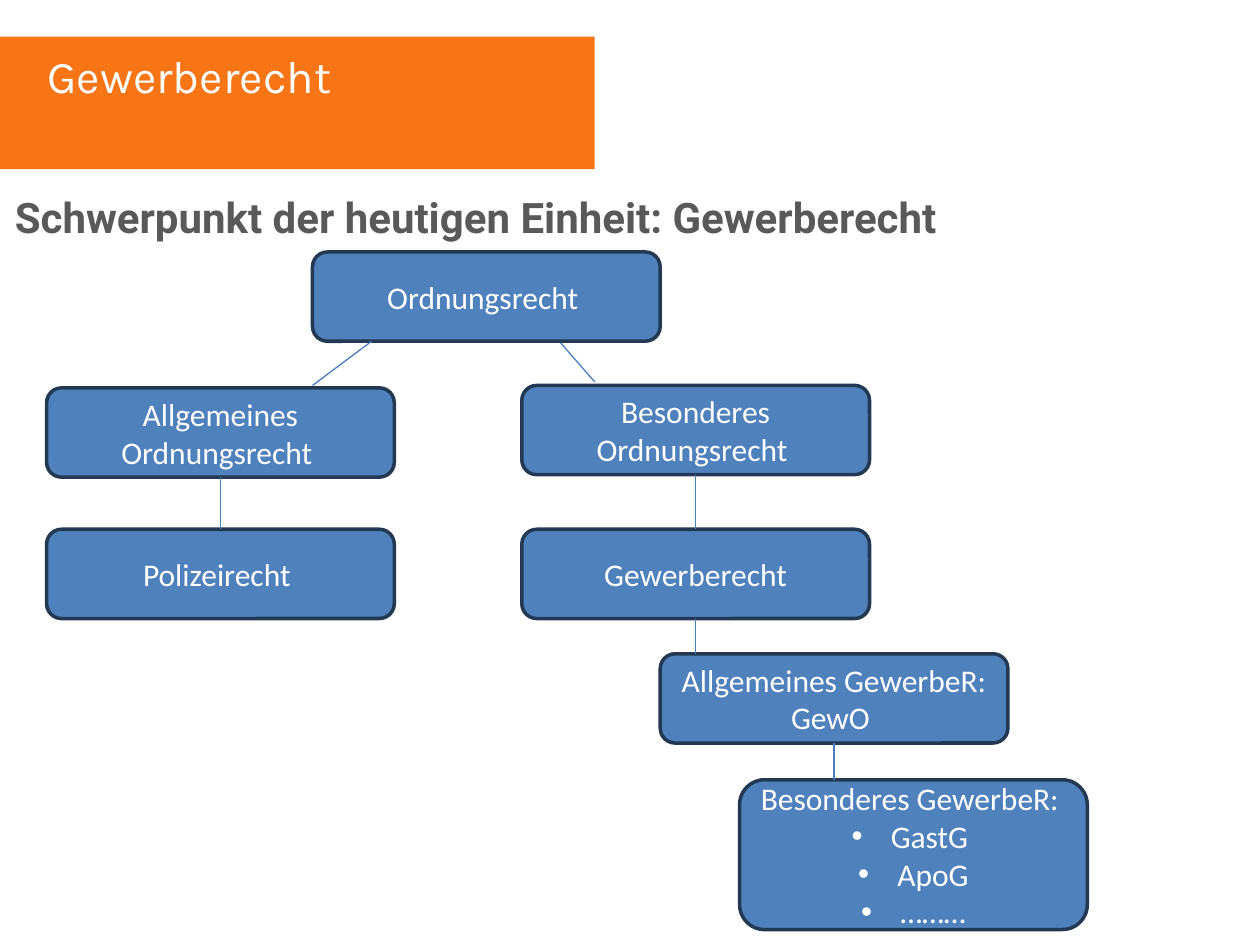
from lxml import etree
from pptx import Presentation
from pptx.dml.color import RGBColor
from pptx.enum import shapes, text
from pptx.oxml import ns
from pptx.util import Cm, Pt

TITLE = "Gewerberecht"
HEADING = "Schwerpunkt der heutigen Einheit: Gewerberecht"
HEADING_TABS = [1, 2, 3, 4, 5.46, 6.73, 8.23, 9.96]
LEFT, RIGHT, LOWER_ROW = 0.94, 10.52, 10.67
BOX_WIDTH, BOX_HEIGHT = 7.01, 1.8
BOXES = {
    "ordnung": (6.3, 5.08, BOX_HEIGHT, "Ordnungsrecht ", []),
    "besonderes_gewerbe": (14.91, 15.72, 3.02, "Besonderes GewerbeR: ",
                           ["GastG ", "ApoG", "………"]),
    "polizei": (LEFT, LOWER_ROW, BOX_HEIGHT, "Polizeirecht ", []),
    "allgemeines": (LEFT, 7.82, BOX_HEIGHT, "Allgemeines Ordnungsrecht ", []),
    "besonderes": (RIGHT, 7.77, BOX_HEIGHT, "Besonderes Ordnungsrecht ", []),
    "gewerbe": (RIGHT, LOWER_ROW, BOX_HEIGHT, "Gewerberecht", []),
    "gewo": (13.31, 13.18, BOX_HEIGHT, "Allgemeines GewerbeR: GewO ", []),
}
BRANCHES = [(7.49, 6.88, 6.3, 7.77), (11.3, 6.91, 11.99, 7.7)]
DESCENTS = [
    ("allgemeines", "polizei", True),
    ("besonderes", "gewerbe", True),
    ("gewerbe", "gewo", False),
    ("gewo", "besonderes_gewerbe", False),
]


def color(target, value):
    target.rgb = RGBColor.from_string(value)


def fill(shape, value):
    shape.fill.solid()
    color(shape.fill.fore_color, value)


def style(paragraph, size, family, value, bold=False):
    for run in paragraph.runs:
        run.font.size = Pt(size)
        run.font.name = family
        run.font.bold = bold
        color(run.font.color, value)


def add_text(slide, left, top, width, height, content, *look):
    box = slide.shapes.add_textbox(Cm(left), Cm(top), Cm(width), Cm(height))
    box.text_frame.word_wrap = True
    box.text_frame.text = content
    style(box.text_frame.paragraphs[0], *look)
    return box.text_frame.paragraphs[0]


def add_bullet(paragraph):
    props = paragraph._p.get_or_add_pPr()
    props.set("marL", str(Cm(0.79)))
    props.set("indent", str(-Cm(0.79)))
    etree.SubElement(props, ns.qn("a:buFont"), typeface="Arial")
    etree.SubElement(props, ns.qn("a:buChar"), char="•")


def add_box(slide, left, top, height, label, items):
    box = slide.shapes.add_shape(shapes.MSO_SHAPE.ROUNDED_RECTANGLE,
                                 Cm(left), Cm(top), Cm(BOX_WIDTH), Cm(height))
    box.shadow.inherit = False
    fill(box, "4F81BD")
    color(box.line.color, "233953")
    box.line.width = Pt(2)
    frame = box.text_frame
    frame.word_wrap = True
    frame.vertical_anchor = text.MSO_ANCHOR.MIDDLE
    frame.text = "\n".join([label] + items)
    for index, paragraph in enumerate(frame.paragraphs):
        paragraph.alignment = text.PP_ALIGN.CENTER
        if index:
            add_bullet(paragraph)
        style(paragraph, 18, "Calibri", "FFFFFF")
    return box


def add_line(slide, *ends):
    line = slide.shapes.add_connector(shapes.MSO_CONNECTOR.STRAIGHT, *ends)
    color(line.line.color, "4B7EBC")
    line.line.width = Pt(0.75)
    etree.SubElement(line._element.spPr, ns.qn("a:effectLst"))
    return line


def main():
    deck = Presentation()
    deck.slide_width, deck.slide_height = Cm(25.4), Cm(19.05)
    slide = deck.slides.add_slide(deck.slide_layouts[6])

    banner = slide.shapes.add_shape(shapes.MSO_SHAPE.RECTANGLE,
                                    0, Cm(0.74), Cm(11.99), Cm(2.67))
    banner.shadow.inherit = False
    fill(banner, "F77515")
    banner.line.fill.background()

    heading = add_text(slide, 0.05, 3.73, 24.79, 3.68, HEADING,
                       24, "Roboto", "595959", True)
    heading.space_after = Pt(5)
    tabs = etree.SubElement(heading._p.get_or_add_pPr(), ns.qn("a:tabLst"))
    for stop in HEADING_TABS:
        etree.SubElement(tabs, ns.qn("a:tab"), pos=str(Cm(stop)), algn="l")
    add_text(slide, 0.71, 0.84, 11.99, 1.37, TITLE, 26, "Karla", "FFFFFF")

    boxes = {key: add_box(slide, *box) for key, box in BOXES.items()}
    for branch in BRANCHES:
        add_line(slide, *map(Cm, branch))
    for upper, lower, aligned in DESCENTS:
        start, end = boxes[upper], boxes[lower]
        middle = start.left + start.width // 2
        line = add_line(slide, middle, start.top + start.height, middle, end.top)
        line.begin_connect(start, 2)
        if aligned:
            line.end_connect(end, 0)

    deck.save("out.pptx")


if __name__ == "__main__":
    main()
